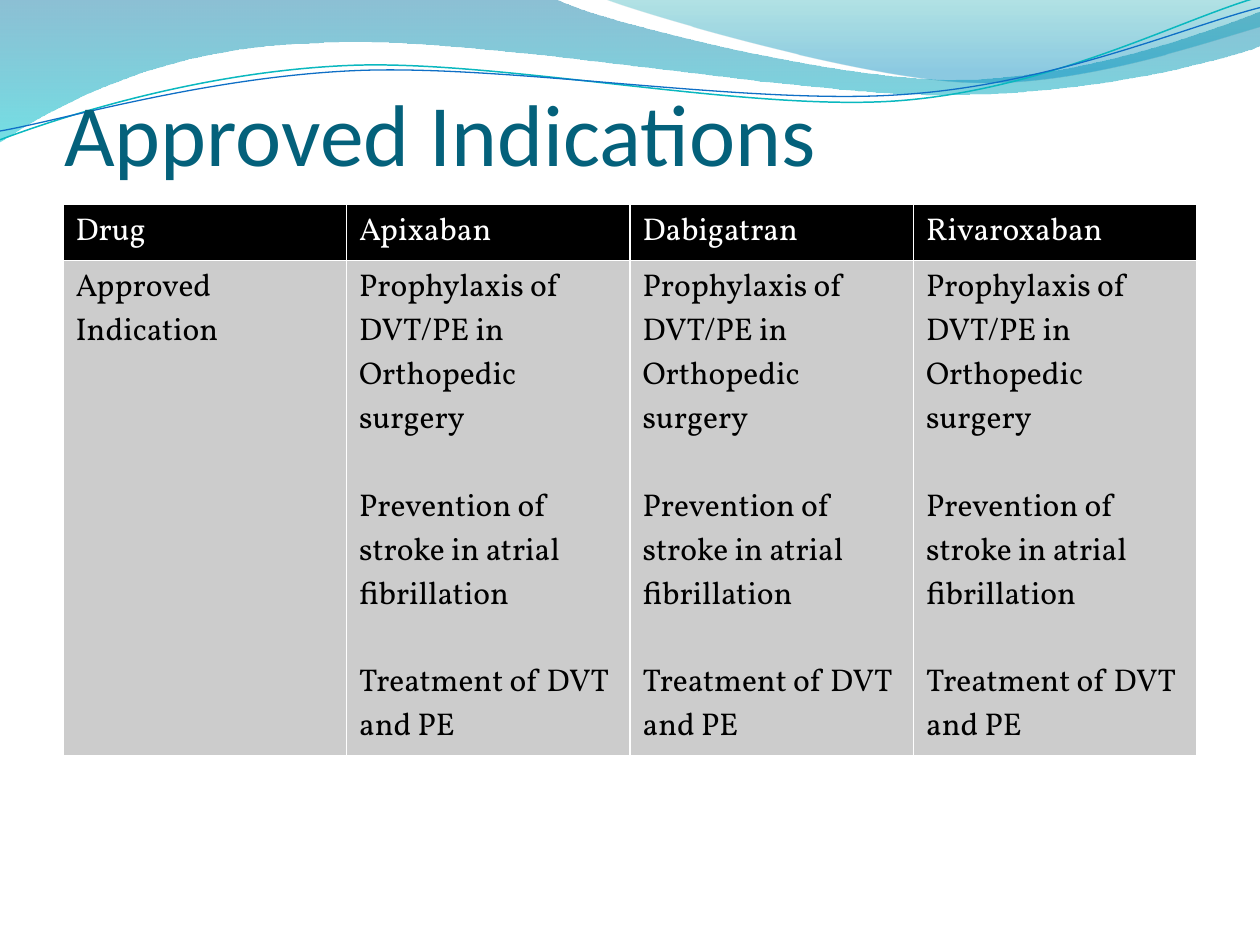
"""Build the Approved Indications slide with its wave header and drug table."""
import math
import pptx
import pptx.dml.color
import pptx.enum.text
import pptx.oxml
import pptx.oxml.ns
import pptx.util

Inches, Pt = pptx.util.Inches, pptx.util.Pt

THEME = {
    "title": "04617B", "head_fill": "000000", "head_text": "FFFFFF",
    "body_fill": "CCCCCC", "body_text": "000000", "border": "FFFFFF",
    "title_font": "Calibri", "table_font": "Vollkorn",
    "title_size": 50, "table_size": 18, "paragraph_gap": 25,
}

TITLE = "Approved Indications"
USES = [
    "Prophylaxis of DVT/PE in Orthopedic surgery",
    "Prevention of stroke in atrial fibrillation",
    "Treatment of DVT and PE",
]
DRUGS = ["Apixaban", "Dabigatran", "Rivaroxaban"]
ROWS = [
    [["Drug"]] + [[drug] for drug in DRUGS],
    [["Approved Indication"]] + [USES for _ in DRUGS],
]
TABLE_BOX = (0.5, 1.62, 9, 3.81)
ROW_HEIGHT = 0.41

BANDS = [
    {"box": (-0.01, -0.01, 10.02, 1.14),
     "points": [(0, 0), (4.4, -0.01),
                (4.76, 0.17, 6.64, 0.63, 7.58, 0.63),
                (8.53, 0.63, 9.58, 0.26, 10, 0.09), (10.01, 0.36),
                (9.83, 0.44, 8.7, 0.76, 7.46, 0.75),
                (6.22, 0.75, 3.82, 0.28, 2.57, 0.34),
                (1.29, 0.36, 0.46, 0.83, -0.01, 1.13)],
     "stops": [(0, "0074A1", 45), (1, "00C6CF", 55)]},
    {"box": (4.79, -0.01, 5.21, 0.7),
     "points": [(4.79, -0.01),
                (5.09, 0.11, 6.82, 0.62, 7.69, 0.65),
                (8.56, 0.69, 9.61, 0.32, 10, 0.21), (10, 0)],
     "stops": [(0, "00A1A9", 30), (0.8, "008BBF", 45)]},
]
CURVE_TILT = -2.7
CURVES = [
    {"box": (-0.02, 0.22, 10.02, 0.71),
     "points": [(0, 1.11), (0.48, 0.93, 1.58, 0.57, 2.77, 0.52),
                (3.95, 0.47, 5.93, 0.89, 7.13, 0.8),
                (8.33, 0.71, 9.38, 0.15, 9.98, -0.02)],
     "color": "0AB8BF", "width": 0.85},
    {"box": (-0.02, 0.3, 10.03, 0.58),
     "points": [(0, 1.04), (0.47, 0.96, 1.64, 0.61, 2.83, 0.56),
                (4.03, 0.51, 5.97, 0.84, 7.17, 0.75),
                (8.36, 0.67, 9.41, 0.21, 10, 0.06)],
     "color": "0F6FC6", "width": 0.75},
]


def rgb(value):
    return pptx.dml.color.RGBColor.from_string(value)


def local_points(numbers, box, tilt):
    """Return point elements relative to a box, with its tilt undone."""
    left, top, width, height = box
    cos, sin = math.cos(math.radians(tilt)), math.sin(math.radians(tilt))
    nodes = []
    for x, y in zip(numbers[::2], numbers[1::2]):
        dx, dy = x - left - width / 2, y - top - height / 2
        u = Inches(width / 2 + dx * cos + dy * sin)
        v = Inches(height / 2 - dx * sin + dy * cos)
        nodes.append(pptx.oxml.parse_xml(
            f'<a:pt {pptx.oxml.ns.nsdecls("a")} x="{u}" y="{v}"/>'))
    return nodes


def add_path(s, box, points, close, tilt=0):
    """Add a freeform whose six-number points are cubic segments."""
    ends = [(Inches(p[-2]), Inches(p[-1])) for p in points]
    builder = s.shapes.build_freeform(*ends[0], scale=1.0)
    builder.add_line_segments(ends[1:], close=close)
    sp = builder.convert_to_shape()
    sp.shadow.inherit = False
    sp.left, sp.top, sp.width, sp.height = map(Inches, box)
    sp.rotation = tilt % 360
    outline = next(sp._element.iter(pptx.oxml.ns.qn("a:path")))
    outline.set("w", str(sp.width))
    outline.set("h", str(sp.height))
    for step, numbers in zip(list(outline), points):
        for node in list(step):
            step.remove(node)
        if len(numbers) == 6:
            curve = pptx.oxml.parse_xml(
                f'<a:cubicBezTo {pptx.oxml.ns.nsdecls("a")}/>')
            outline.replace(step, curve)
            step = curve
        step.extend(local_points(numbers, box, tilt))
    return sp


def add_band(s, box, points, stops):
    sp = add_path(s, box, points, True)
    sp.line.fill.background()
    sp.fill.gradient()
    sp.fill.gradient_angle = 270
    for stop, (position, color, _) in zip(sp.fill.gradient_stops, stops):
        stop.position = position
        stop.color.rgb = rgb(color)
    for node, (_, _, opacity) in zip(
            sp._element.spPr.iter(pptx.oxml.ns.qn("a:srgbClr")), stops):
        node.append(pptx.oxml.parse_xml(
            f'<a:alpha {pptx.oxml.ns.nsdecls("a")} val="{opacity * 1000}"/>'))


def add_curve(s, box, points, color, width):
    sp = add_path(s, box, points, False, CURVE_TILT)
    sp.fill.background()
    sp.line.color.rgb = rgb(color)
    sp.line.width = Pt(width)


def write(tf, paragraphs, *, font, size, color, gap=0):
    """Fill a text frame with left-aligned paragraphs in one format."""
    tf.word_wrap = True
    for i, text in enumerate(paragraphs):
        p = tf.paragraphs[0] if i == 0 else tf.add_paragraph()
        p.alignment = pptx.enum.text.PP_ALIGN.LEFT
        p.space_before = Pt(gap if i else 0)
        r = p.add_run()
        r.text = text
        r.font.name = font
        r.font.size = Pt(size)
        r.font.bold = False
        r.font.color.rgb = rgb(color)


def add_borders(cell):
    tc_pr = cell._tc.get_or_add_tcPr()
    for side in "LRTB":
        tc_pr.append(pptx.oxml.parse_xml(
            f'<a:ln{side} {pptx.oxml.ns.nsdecls("a")} w="{Pt(1)}"><a:solidFill>'
            f'<a:srgbClr val="{THEME["border"]}"/></a:solidFill></a:ln{side}>'))


def add_indications(s):
    frame = s.shapes.add_table(len(ROWS), len(ROWS[0]), *map(Inches, TABLE_BOX))
    table = frame.table
    for i, row in enumerate(ROWS):
        table.rows[i].height = Inches(ROW_HEIGHT)
        kind = "body" if i else "head"
        for j, paragraphs in enumerate(row):
            cell = table.cell(i, j)
            add_borders(cell)
            cell.fill.solid()
            cell.fill.fore_color.rgb = rgb(THEME[kind + "_fill"])
            write(cell.text_frame, paragraphs, font=THEME["table_font"],
                  size=THEME["table_size"], color=THEME[kind + "_text"],
                  gap=THEME["paragraph_gap"])
    frame.height = Inches(TABLE_BOX[3])


def set_title(s):
    title = s.shapes.title
    title.left, title.top = Inches(0.51), Inches(0.21)
    title.width, title.height = Inches(9), Inches(1.25)
    tf = title.text_frame
    tf.auto_size = pptx.enum.text.MSO_AUTO_SIZE.NONE
    tf.vertical_anchor = pptx.enum.text.MSO_ANCHOR.BOTTOM
    tf.margin_left = tf.margin_right = tf.margin_bottom = 0
    tf.margin_top = Inches(0.05)
    write(tf, [TITLE], font=THEME["title_font"], size=THEME["title_size"],
          color=THEME["title"])
    s.shapes._spTree.append(title._element)


def main():
    prs = pptx.Presentation()
    prs.slide_width, prs.slide_height = Inches(10), Inches(7.5)
    s = prs.slides.add_slide(prs.slide_layouts[5])
    for band in BANDS:
        add_band(s, **band)
    for curve in CURVES:
        add_curve(s, **curve)
    add_indications(s)
    set_title(s)
    prs.save("out.pptx")


if __name__ == "__main__":
    main()
